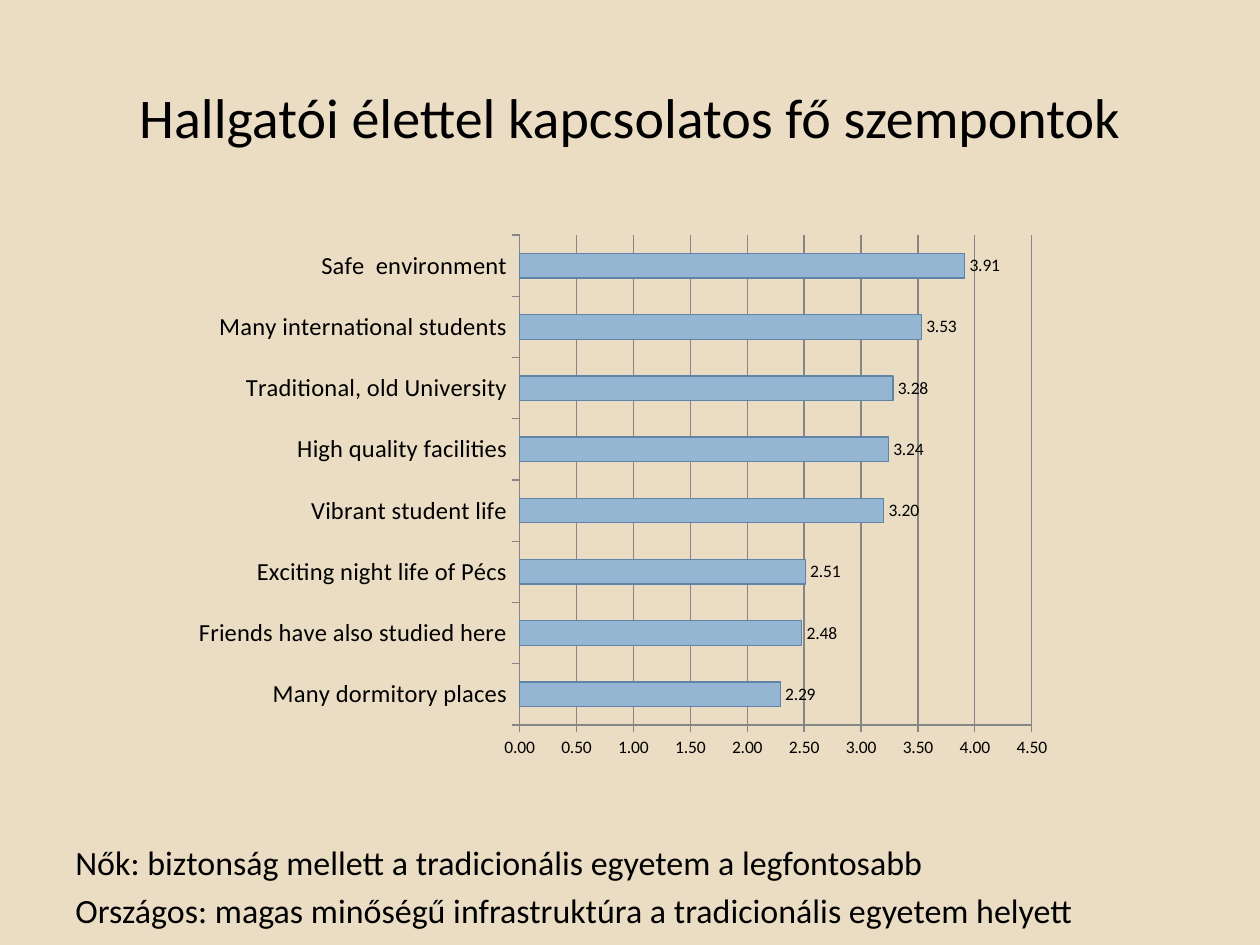
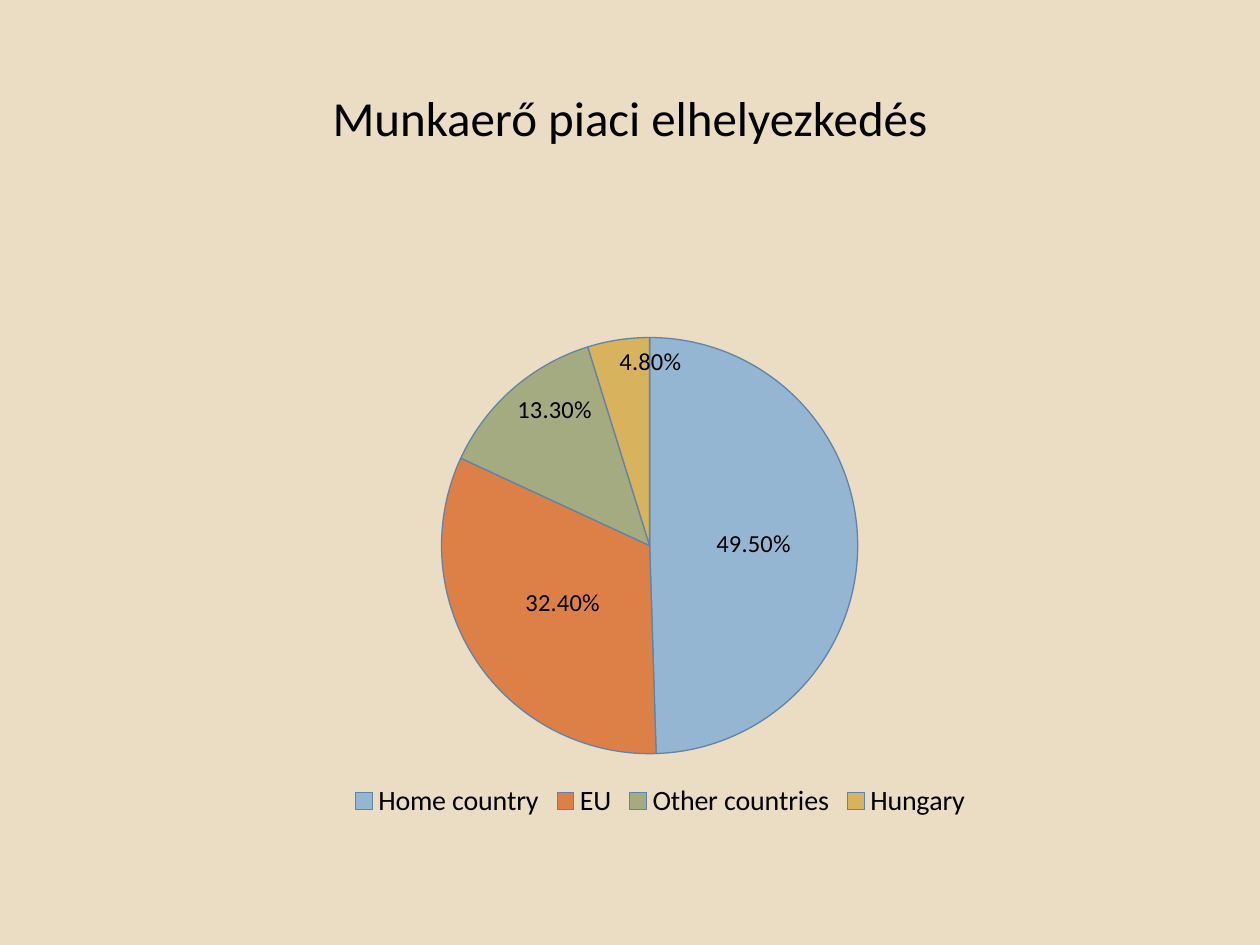
from dataclasses import dataclass

from lxml.etree import SubElement
from pptx import Presentation
from pptx.chart.chart import Chart
from pptx.chart.data import CategoryChartData
from pptx.dml.color import RGBColor
from pptx.dml.line import LineFormat
from pptx.enum.chart import (XL_CHART_TYPE, XL_LABEL_POSITION,
                             XL_LEGEND_POSITION, XL_TICK_MARK)
from pptx.enum.text import MSO_ANCHOR, PP_ALIGN
from pptx.oxml.ns import qn
from pptx.slide import Slide
from pptx.util import Inches, Pt

FONT = "Calibri"
INK = "000000"
SAND = "EBDDC3"
GRAY = "868686"
EDGE = "6083A8"
BLUE = "94B6D2"
HUES = (BLUE, "DD8047", "A5AB81", "D8B25C")


@dataclass(frozen=True)
class Box:
    left: float
    top: float
    width: float
    height: float


@dataclass(frozen=True)
class Label:
    lines: tuple[str, ...]
    box: Box
    size: float
    align: PP_ALIGN = PP_ALIGN.LEFT
    anchor: MSO_ANCHOR = MSO_ANCHOR.BOTTOM
    gap: float = 0


@dataclass(frozen=True)
class Graph:
    kind: XL_CHART_TYPE
    box: Box
    plot: Box
    format: str
    rows: dict[str, float]


TITLE = Box(0.5, 0.3, 9, 1.25)
NOTES = Label(
    ("Nők: biztonság mellett a tradicionális egyetem a legfontosabb",
     "Országos: magas minőségű infrastruktúra a tradicionális egyetem helyett"),
    Box(0.5, 6.5, 9, 0.93), 19.4, gap=3.9)
LIFE = Graph(
    XL_CHART_TYPE.BAR_CLUSTERED, Box(1.46, 1.78, 7.01, 4.32),
    Box(0.38, 0.02, 0.58, 0.9), "###0.00",
    {"Many dormitory places": 2.29, "Friends have also studied here": 2.48,
     "Exciting night life of Pécs": 2.51, "Vibrant student life": 3.2,
     "High quality facilities": 3.24, "Traditional, old University": 3.28,
     "Many international students": 3.53, "Safe  environment": 3.91})
JOBS = Graph(
    XL_CHART_TYPE.PIE, Box(1.06, 2.25, 8.36, 4.29),
    Box(0.29, 0.1, 0.4, 0.77), "0.00%",
    {"Home country": 0.495, "EU": 0.324, "Other countries": 0.133,
     "Hungary": 0.048})


def color(code: str) -> RGBColor:
    return RGBColor.from_string(code)


def place(box: Box) -> tuple[int, ...]:
    return tuple(Inches(part) for part in
                 (box.left, box.top, box.width, box.height))


def style(font, size: float) -> None:
    font.name = FONT
    font.size = Pt(size)
    font.color.rgb = color(INK)


def stroke(line: LineFormat, code: str) -> None:
    line.color.rgb = color(code)
    line.width = Pt(0.75)


def write(slide: Slide, label: Label) -> None:
    frame = slide.shapes.add_textbox(*place(label.box)).text_frame
    frame.word_wrap = True
    frame.vertical_anchor = label.anchor
    for i, line in enumerate(label.lines):
        para = frame.add_paragraph() if i else frame.paragraphs[0]
        para.alignment = label.align
        para.space_before = Pt(label.gap)
        run = para.add_run()
        run.text = line
        style(run.font, label.size)


def set_plot(chart: Chart, box: Box) -> None:
    area = chart.element.find(f".//{qn('c:plotArea')}")
    for old in area.findall(qn("c:layout")):
        area.remove(old)
    layout = SubElement(area, qn("c:layout"))
    area.insert(0, layout)
    manual = SubElement(layout, qn("c:manualLayout"))
    for tag, value in (("layoutTarget", "inner"), ("xMode", "edge"),
                       ("yMode", "edge"), ("x", box.left), ("y", box.top),
                       ("w", box.width), ("h", box.height)):
        SubElement(manual, qn(f"c:{tag}")).set("val", str(value))


def add_graph(slide: Slide, graph: Graph, size: float) -> Chart:
    data = CategoryChartData(number_format=graph.format)
    data.categories = list(graph.rows)
    data.add_series("Series 1", list(graph.rows.values()))
    chart = slide.shapes.add_chart(graph.kind, *place(graph.box), data).chart
    chart.has_title = False
    chart.has_legend = False
    style(chart.font, 10)
    set_plot(chart, graph.plot)
    labels = chart.plots[0].series[0].data_labels
    labels.show_value = True
    labels.number_format = graph.format
    labels.number_format_is_linked = False
    style(labels.font, size)
    return chart


def draw_bars(slide: Slide, graph: Graph) -> None:
    chart = add_graph(slide, graph, 10)
    plot = chart.plots[0]
    plot.gap_width = 150
    plot.vary_by_categories = False
    bars = plot.series[0]
    bars.format.fill.solid()
    bars.format.fill.fore_color.rgb = color(BLUE)
    stroke(bars.format.line, EDGE)
    bars.data_labels.position = XL_LABEL_POSITION.OUTSIDE_END
    for axis, size in ((chart.category_axis, 14), (chart.value_axis, 10)):
        axis.major_tick_mark = XL_TICK_MARK.OUTSIDE
        axis.minor_tick_mark = XL_TICK_MARK.NONE
        stroke(axis.format.line, GRAY)
        style(axis.tick_labels.font, size)
    scale = chart.value_axis
    scale.minimum_scale = 0
    scale.maximum_scale = 4.5
    scale.major_unit = 0.5
    scale.has_major_gridlines = True
    stroke(scale.major_gridlines.format.line, GRAY)
    scale.tick_labels.number_format = graph.format
    scale.tick_labels.number_format_is_linked = False


def draw_pie(slide: Slide, graph: Graph) -> None:
    chart = add_graph(slide, graph, 14)
    plot = chart.plots[0]
    plot.vary_by_categories = True
    pie = plot.series[0]
    for i, (hue, share) in enumerate(zip(HUES, graph.rows.values())):
        slice = pie.points[i]
        slice.format.fill.solid()
        slice.format.fill.fore_color.rgb = color(hue)
        stroke(slice.format.line, EDGE)
        style(slice.data_label.font, 14)
        slice.data_label.position = (
            XL_LABEL_POSITION.CENTER if share > 0.2
            else XL_LABEL_POSITION.INSIDE_END)
    chart.has_legend = True
    chart.legend.position = XL_LEGEND_POSITION.BOTTOM
    chart.legend.include_in_layout = False
    style(chart.legend.font, 16)


def main() -> None:
    deck = Presentation()
    deck.slide_width = Inches(10)
    deck.slide_height = Inches(7.5)

    def start(title: str, size: float) -> Slide:
        slide = deck.slides.add_slide(deck.slide_layouts[6])
        slide.background.fill.solid()
        slide.background.fill.fore_color.rgb = color(SAND)
        write(slide, Label((title,), TITLE, size, PP_ALIGN.CENTER,
                           MSO_ANCHOR.MIDDLE))
        return slide

    life = start("Hallgatói élettel kapcsolatos fő szempontok", 32)
    write(life, NOTES)
    draw_bars(life, LIFE)
    jobs = start("Munkaerő piaci elhelyezkedés", 28)
    draw_pie(jobs, JOBS)
    deck.save("out.pptx")


if __name__ == "__main__":
    main()
